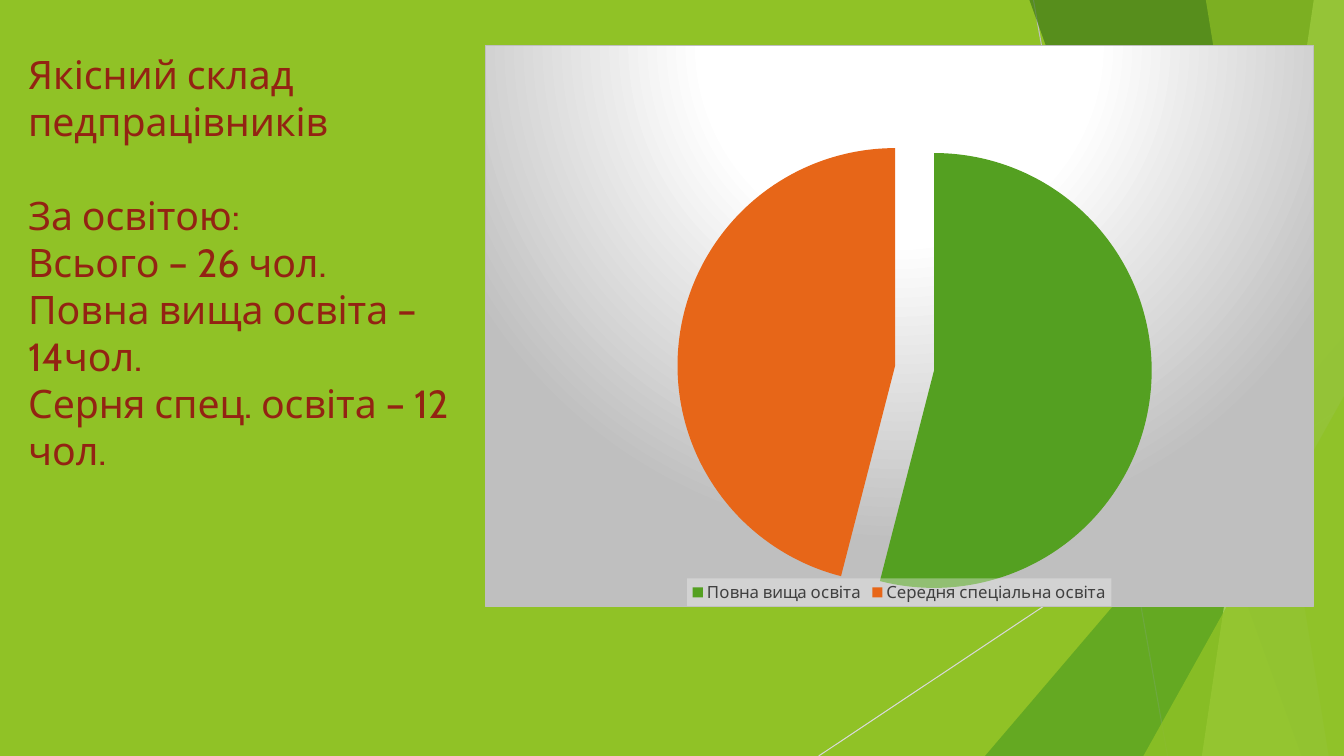
from dataclasses import dataclass

from lxml.etree import SubElement
from pptx import Presentation
from pptx.chart.data import CategoryChartData
from pptx.dml.color import RGBColor
from pptx.enum.chart import XL_CHART_TYPE, XL_LEGEND_POSITION
from pptx.enum.shapes import MSO_CONNECTOR, MSO_SHAPE
from pptx.oxml import parse_xml
from pptx.oxml.ns import nsdecls, qn
from pptx.slide import Slide
from pptx.util import Inches, Pt

LIME = RGBColor(0x90, 0xC2, 0x26)
GREEN = RGBColor(0x54, 0xA0, 0x21)
DARK_GREEN = RGBColor(0x3F, 0x78, 0x19)
PALE_LIME = RGBColor(0xC0, 0xE4, 0x74)
ORANGE = RGBColor(0xE7, 0x66, 0x18)
MAROON = RGBColor(0x93, 0x23, 0x13)
SILVER = RGBColor(0xBF, 0xBF, 0xBF)
LIGHT_GRAY = RGBColor(0xD9, 0xD9, 0xD9)
CHARCOAL = RGBColor(0x40, 0x40, 0x40)
BLACK = RGBColor(0, 0, 0)
FONT = "Cabin"
WIDTH, HEIGHT = 13.33, 7.5


@dataclass
class Ray:
    start: tuple[float, float]
    end: tuple[float, float]
    color: RGBColor


@dataclass
class Band:
    top_left: float
    bottom_left: float
    color: RGBColor
    opacity: int


@dataclass
class Corner:
    left: float
    top: float
    width: float
    apex: float
    color: RGBColor
    opacity: int


RAYS = [
    Ray((10.25, 0), (11.58, HEIGHT), SILVER),
    Ray((WIDTH, 4.03), (8.12, HEIGHT), LIGHT_GRAY),
]
FACETS = [
    Band(12.28, 10.04, LIME, 30),
    Band(10.5, 11.83, LIME, 20),
    Corner(9.77, 3.33, 3.56, 1, GREEN, 72),
    Band(10.21, 12.91, DARK_GREEN, 70),
    Band(13.03, 11.92, PALE_LIME, 70),
    Band(11.96, 13.18, LIME, 65),
    Corner(11.34, 3.93, 1.99, 1, LIME, 80),
    Corner(0, 4.39, 0.49, 0, LIME, 85),
]
LINES = [
    "Якісний склад педпрацівників",
    "За освітою:",
    "Всього – 26 чол.",
    "Повна вища освіта –",
    "14чол.",
    "Серня спец. освіта – 12 чол.",
]
EDUCATION = [
    ("Повна вища освіта", 54, GREEN),
    ("Середня спеціальна освіта", 46, ORANGE),
]
CHART_AREA = f"""<c:spPr {nsdecls("c", "a")}>
  <a:gradFill><a:gsLst>
    <a:gs pos="0"><a:srgbClr val="FFFFFF"/></a:gs>
    <a:gs pos="39000"><a:srgbClr val="FFFFFF"/></a:gs>
    <a:gs pos="100000"><a:srgbClr val="{SILVER}"/></a:gs>
  </a:gsLst><a:path path="circle">
    <a:fillToRect l="50000" t="-80000" r="50000" b="180000"/>
  </a:path></a:gradFill>
  <a:ln w="9525"><a:solidFill><a:srgbClr val="{SILVER}"/></a:solidFill></a:ln>
</c:spPr>"""
LEGEND_AREA = f"""<c:spPr {nsdecls("c", "a")}><a:solidFill>
  <a:srgbClr val="F2F2F2"><a:alpha val="39000"/></a:srgbClr>
</a:solidFill></c:spPr>"""
PLOT_LAYOUT = f"""<c:layout {nsdecls("c")}><c:manualLayout>
  <c:layoutTarget val="inner"/><c:xMode val="edge"/><c:yMode val="edge"/>
  <c:x val="0.037"/><c:y val="0.152"/><c:w val="0.963"/><c:h val="0.846"/>
</c:manualLayout></c:layout>"""
EXPLOSION = f'<c:explosion {nsdecls("c")} val="9"/>'


def add_ray(s: Slide, ray: Ray) -> None:
    line = s.shapes.add_connector(
        MSO_CONNECTOR.STRAIGHT, *map(Inches, ray.start + ray.end)
    )
    line.line.color.rgb = ray.color
    line.line.width = Pt(0.75)
    SubElement(line._element.spPr, qn("a:effectLst"))


def add_facet(s: Slide, facet: Band | Corner) -> None:
    if isinstance(facet, Band):
        outline = [(WIDTH, 0), (WIDTH, HEIGHT), (facet.bottom_left, HEIGHT)]
        builder = s.shapes.build_freeform(Inches(facet.top_left), 0)
        builder.add_line_segments([(Inches(x), Inches(y)) for x, y in outline])
        sp = builder.convert_to_shape()
    else:
        sp = s.shapes.add_shape(
            MSO_SHAPE.ISOSCELES_TRIANGLE,
            Inches(facet.left),
            Inches(facet.top),
            Inches(facet.width),
            Inches(HEIGHT - facet.top),
        )
        sp.adjustments[0] = facet.apex
    sp.shadow.inherit = False
    sp.fill.solid()
    sp.fill.fore_color.rgb = facet.color
    sp.line.fill.background()
    color = sp._element.spPr.find(qn("a:solidFill"))[0]
    SubElement(color, qn("a:alpha"), val=str(facet.opacity * 1000))


def add_summary(s: Slide) -> None:
    box = s.shapes.add_textbox(Inches(0.18), Inches(0.45), Inches(4.42), Inches(4.34))
    tf = box.text_frame
    tf.word_wrap = True
    tf.text = "\n".join(LINES)
    for p in tf.paragraphs:
        p.font.name = FONT
        p.font.size = Pt(28)
        p.font.color.rgb = MAROON
    tf.paragraphs[1].space_before = Pt(33.6)


def add_education_chart(s: Slide) -> None:
    data = CategoryChartData()
    data.categories = [name for name, _, _ in EDUCATION]
    data.add_series("Series 1", [share for _, share, _ in EDUCATION])
    chart = s.shapes.add_chart(
        XL_CHART_TYPE.PIE, Inches(4.81), Inches(0.45), Inches(8.22), Inches(5.57), data
    ).chart
    chart.has_title = False
    chart.font.name = FONT
    chart.font.size = Pt(10)
    chart.font.color.rgb = BLACK
    chart.has_legend = True
    legend = chart.legend
    legend.position = XL_LEGEND_POSITION.BOTTOM
    legend.include_in_layout = True
    legend.font.name = FONT
    legend.font.size = Pt(12)
    legend.font.color.rgb = CHARCOAL
    legend._element.find(qn("c:txPr")).addprevious(parse_xml(LEGEND_AREA))

    plot = chart.plots[0]
    plot.vary_by_categories = True
    series = plot.series[0]
    for i, (_, _, color) in enumerate(EDUCATION):
        fill = series.points[i].format.fill
        fill.solid()
        fill.fore_color.rgb = color
    series._element.find(qn("c:dPt")).addprevious(parse_xml(EXPLOSION))

    space = chart._chartSpace
    space.find(qn("c:txPr")).addprevious(parse_xml(CHART_AREA))
    plot_area = space.chart.plotArea
    for layout in plot_area.findall(qn("c:layout")):
        plot_area.remove(layout)
    plot_area.insert(0, parse_xml(PLOT_LAYOUT))


def main() -> None:
    prs = Presentation()
    prs.slide_width, prs.slide_height = Inches(WIDTH), Inches(HEIGHT)
    s = prs.slides.add_slide(prs.slide_layouts[6])
    s.background.fill.solid()
    s.background.fill.fore_color.rgb = LIME
    for ray in RAYS:
        add_ray(s, ray)
    for facet in FACETS:
        add_facet(s, facet)
    add_summary(s)
    add_education_chart(s)
    prs.save("out.pptx")


if __name__ == "__main__":
    main()
